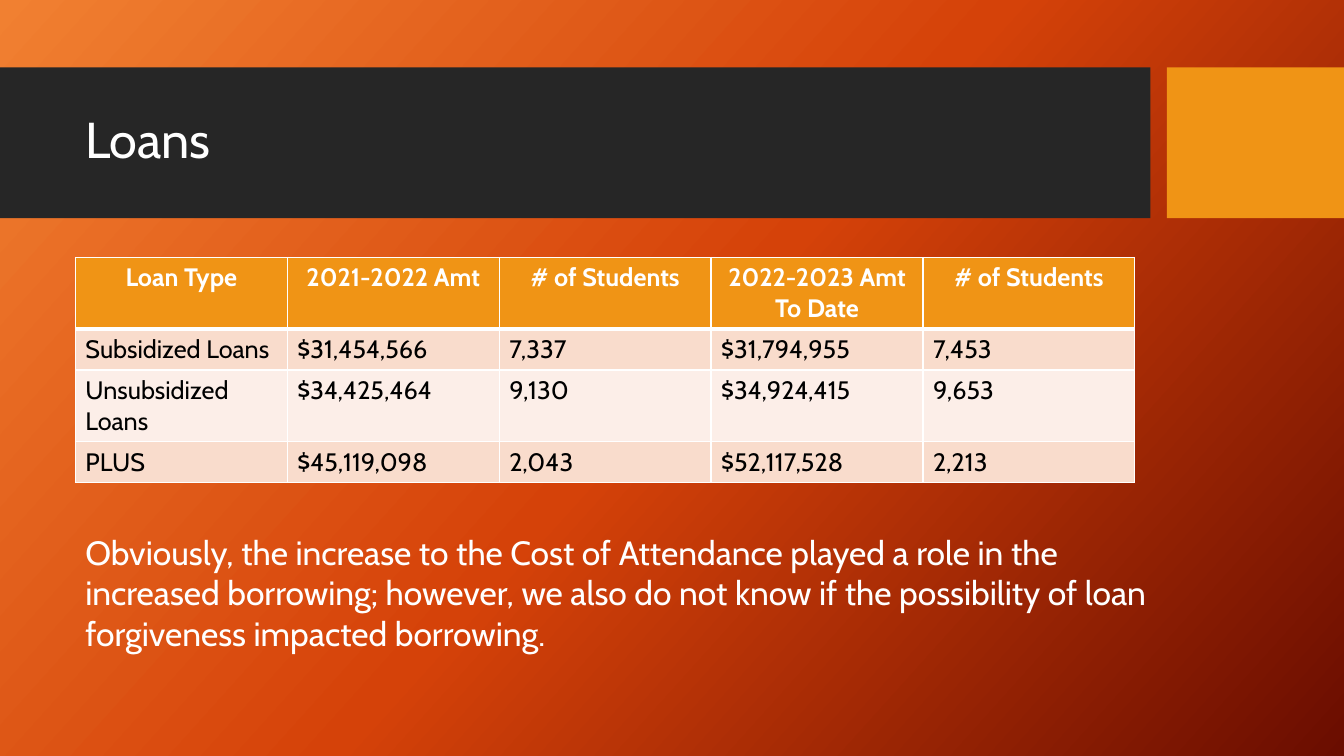
from copy import deepcopy
from dataclasses import dataclass

from lxml import etree
from pptx import Presentation
from pptx import util as u
from pptx.dml import color
from pptx.enum import shapes, text
from pptx.oxml import ns


@dataclass(frozen=True)
class Theme:
    font: str = "Cabin"
    light: str = "FFFFFF"
    dark: str = "000000"
    band: str = "262626"
    accent: str = "F09415"
    row_fills: tuple = ("F9DCCC", "FCEEE8")
    gradient: tuple = ((0, "F18031"), (0.5, "D54209"), (1, "6A0D00"))
    gradient_angle: int = 42
    title_size: int = 36
    note_size: int = 24
    table_size: int = 18
    border: int = 1
    header_border: int = 3


def rgb(value):
    return color.RGBColor.from_string(value)


class SlideBuilder:
    def __init__(self, slide, theme):
        self.slide = slide
        self.theme = theme

    def background(self):
        fill = self.slide.background.fill
        fill.gradient()
        fill.gradient_angle = 360 - self.theme.gradient_angle
        stop_list = next(self.slide.element.iter(ns.qn("a:gsLst")))
        stop_list.append(deepcopy(stop_list[-1]))
        for stop, (position, value) in zip(fill.gradient_stops, self.theme.gradient):
            stop.position = position
            stop.color.rgb = rgb(value)

    def block(self, left, top, width, height, fill):
        shape = self.slide.shapes.add_shape(
            shapes.MSO_SHAPE.RECTANGLE, u.Cm(left), u.Cm(top), u.Cm(width), u.Cm(height))
        shape.shadow.inherit = False
        shape.fill.solid()
        shape.fill.fore_color.rgb = rgb(fill)
        shape.line.fill.background()

    def set_text(self, frame, content, size, value, bold=False, align=text.PP_ALIGN.LEFT):
        frame.text = content
        frame.word_wrap = True
        paragraph = frame.paragraphs[0]
        paragraph.alignment = align
        font = paragraph.runs[0].font
        font.name = self.theme.font
        font.size = u.Pt(size)
        font.bold = bold
        font.color.rgb = rgb(value)
        return paragraph

    def title(self, content, left, top, width, height):
        title = self.slide.shapes.title
        title.left, title.top = u.Cm(left), u.Cm(top)
        title.width, title.height = u.Cm(width), u.Cm(height)
        title.element.getparent().append(title.element)
        frame = title.text_frame
        frame.auto_size = text.MSO_AUTO_SIZE.NONE
        frame.vertical_anchor = text.MSO_ANCHOR.MIDDLE
        paragraph = self.set_text(frame, content, self.theme.title_size, self.theme.light)
        paragraph.line_spacing = 0.9

    def note(self, content, left, top, width, height):
        box = self.slide.shapes.add_textbox(
            u.Cm(left), u.Cm(top), u.Cm(width), u.Cm(height))
        self.set_text(box.text_frame, content, self.theme.note_size, self.theme.light)

    def borders(self, cell, top, bottom):
        properties = cell._tc.get_or_add_tcPr()
        thin = self.theme.border
        for side, width in (("L", thin), ("R", thin), ("T", top), ("B", bottom)):
            line = etree.SubElement(
                properties, ns.qn(f"a:ln{side}"), w=str(u.Pt(width)))
            fill = etree.SubElement(line, ns.qn("a:solidFill"))
            etree.SubElement(fill, ns.qn("a:srgbClr"), val=self.theme.light)

    def table(self, rows, left, top, column_width, row_height):
        theme = self.theme
        columns = len(rows[0])
        table = self.slide.shapes.add_table(
            len(rows), columns, u.Cm(left), u.Cm(top),
            u.Cm(column_width * columns), u.Cm(row_height * len(rows))).table
        for column in table.columns:
            column.width = u.Cm(column_width)
        for index, values in enumerate(rows):
            header = index == 0
            fill = theme.accent if header else theme.row_fills[(index - 1) % 2]
            ink = theme.light if header else theme.dark
            align = text.PP_ALIGN.CENTER if header else text.PP_ALIGN.LEFT
            above = theme.header_border if index == 1 else theme.border
            below = theme.header_border if header else theme.border
            table.rows[index].height = u.Cm(row_height)
            for cell, value in zip(table.rows[index].cells, values):
                self.borders(cell, above, below)
                cell.fill.solid()
                cell.fill.fore_color.rgb = rgb(fill)
                self.set_text(cell.text_frame, value, theme.table_size, ink, header, align)


LOANS = (
    ("Loan Type", "2021-2022 Amt", "# of Students", "2022-2023 Amt To Date", "# of Students"),
    ("Subsidized Loans", "$31,454,566", "7,337", "$31,794,955", "7,453"),
    ("Unsubsidized Loans", "$34,425,464", "9,130", "$34,924,415", "9,653"),
    ("PLUS", "$45,119,098", "2,043", "$52,117,528", "2,213"),
)
NOTE = (
    "Obviously, the increase to the Cost of Attendance played a role in the increased "
    "borrowing; however, we also do not know if the possibility of loan forgiveness "
    "impacted borrowing."
)


def main():
    presentation = Presentation()
    presentation.slide_width = u.Cm(33.87)
    presentation.slide_height = u.Cm(19.05)
    theme = Theme()
    slide = presentation.slides.add_slide(presentation.slide_layouts.get_by_name("Title Only"))
    builder = SlideBuilder(slide, theme)
    builder.background()
    builder.block(0, 1.7, 28.99, 3.8, theme.band)
    builder.block(29.41, 1.7, 4.46, 3.8, theme.accent)
    builder.title("Loans", 1.89, 2.08, 26.7, 3)
    builder.table(LOANS, 1.9, 6.49, 5.34, 1.03)
    builder.note(NOTE, 1.9, 13.28, 27.38, 3.33)
    presentation.save("out.pptx")


if __name__ == "__main__":
    main()
